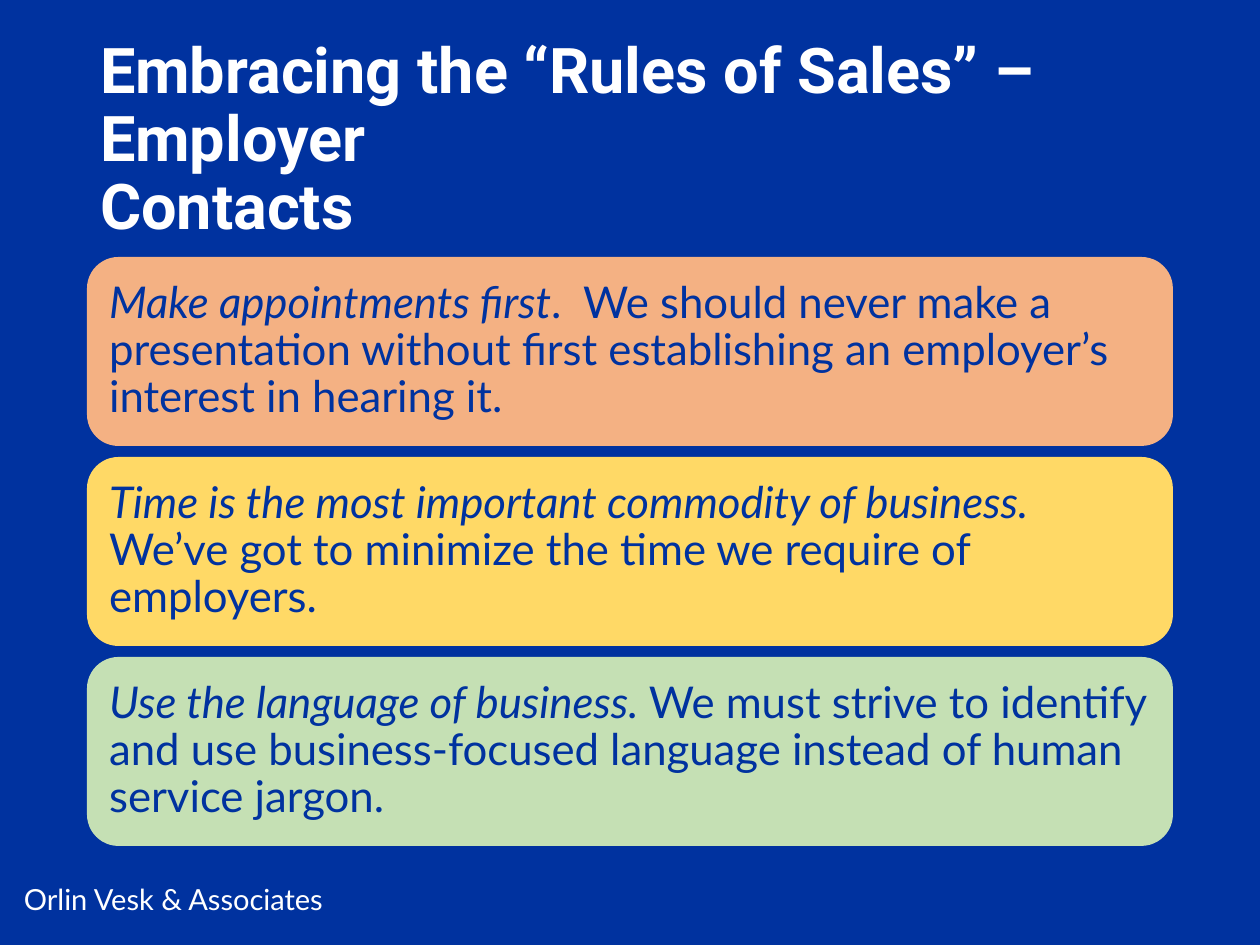
from dataclasses import dataclass

from pptx import Presentation
from pptx.dml.color import RGBColor as Color
from pptx.enum.shapes import MSO_SHAPE as Shape
from pptx.enum.text import MSO_ANCHOR as Anchor, MSO_AUTO_SIZE as AutoSize, PP_ALIGN as Align
from pptx.util import Pt

EMU_PER_PX = 914400 / 126


@dataclass(frozen=True)
class Theme:
    background: str = "00329F"
    light: str = "FFFFFF"
    card_fills: tuple = ("F4B183", "FFD966", "C5E0B4")
    title_font: str = "Roboto"
    body_font: str = "Lato"
    title_size: float = 36
    card_size: float = 25
    footer_size: float = 16.6
    line_spacing: float = 0.9


THEME = Theme()
CONTENT_LEFT, CONTENT_WIDTH = 87, 1086
CARD_TOP, CARD_HEIGHT, CARD_GAP = 257, 189, 11
TITLE = "Embracing the “Rules of Sales” –\vEmployer \vContacts"
FOOTER = "Orlin Vesk & Associates"
RULES = (
    ("Make appointments first",
     ".  We should never make a presentation without first establishing "
     "an employer’s interest in hearing it."),
    ("Time is the most important commodity of business.  ",
     "We’ve got to minimize the time we require of employers."),
    ("Use the language of business. ",
     "We must strive to identify and use business-focused language "
     "instead of human service jargon."),
)


def px(length):
    return round(length * EMU_PER_PX)


def box(left, top, width, height):
    return tuple(px(length) for length in (left, top, width, height))


def prepare_frame(shape, inset):
    frame = shape.text_frame
    frame.word_wrap = True
    frame.auto_size = AutoSize.NONE
    frame.vertical_anchor = Anchor.MIDDLE
    frame.margin_left = frame.margin_right = px(inset)
    frame.margin_top = frame.margin_bottom = px(inset)
    return frame


def format_paragraph(paragraph, font_name, size, color):
    paragraph.alignment = Align.LEFT
    paragraph.line_spacing = THEME.line_spacing
    for run in paragraph.runs:
        run.font.name = font_name
        run.font.size = Pt(size)
        run.font.color.rgb = Color.from_string(color)


def set_title(slide):
    title = slide.shapes.title
    title.left, title.top, title.width, title.height = box(CONTENT_LEFT, 50, CONTENT_WIDTH, 183)
    paragraph = prepare_frame(title, 13).paragraphs[0]
    paragraph.text = TITLE
    format_paragraph(paragraph, THEME.title_font, THEME.title_size, THEME.light)
    for run in paragraph.runs:
        run.font.bold = True


def add_card(slide, index, rule, fill):
    top = CARD_TOP + index * (CARD_HEIGHT + CARD_GAP)
    card = slide.shapes.add_shape(
        Shape.ROUNDED_RECTANGLE, *box(CONTENT_LEFT, top, CONTENT_WIDTH, CARD_HEIGHT))
    card.shadow.inherit = False
    card.fill.solid()
    card.fill.fore_color.rgb = Color.from_string(fill)
    card.line.fill.background()
    paragraph = prepare_frame(card, 13).paragraphs[0]
    for text, italic in zip(rule, (True, False)):
        run = paragraph.add_run()
        run.text = text
        run.font.italic = italic
    format_paragraph(paragraph, THEME.body_font, THEME.card_size, THEME.background)


def add_footer(slide):
    footer = slide.shapes.add_textbox(*box(24, 876, 402, 50))
    paragraph = prepare_frame(footer, 0).paragraphs[0]
    paragraph.text = FOOTER
    format_paragraph(paragraph, THEME.body_font, THEME.footer_size, THEME.light)


def main():
    presentation = Presentation()
    presentation.slide_width, presentation.slide_height = px(1260), px(945)
    slide = presentation.slides.add_slide(presentation.slide_layouts.get_by_name("Title Only"))
    slide.background.fill.solid()
    slide.background.fill.fore_color.rgb = Color.from_string(THEME.background)
    set_title(slide)
    for index, (rule, fill) in enumerate(zip(RULES, THEME.card_fills)):
        add_card(slide, index, rule, fill)
    add_footer(slide)
    presentation.save("out.pptx")


if __name__ == "__main__":
    main()
